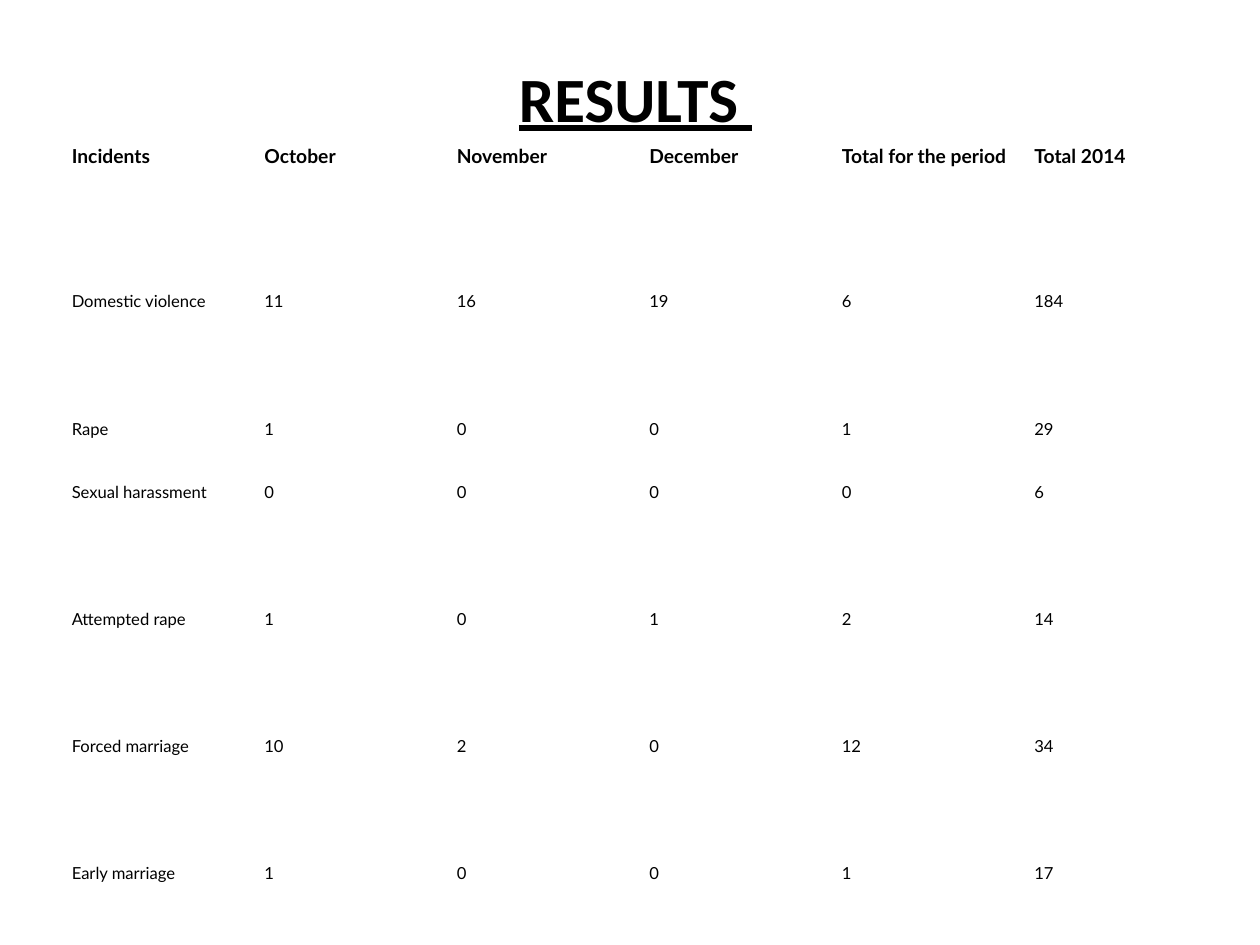
from pptx import Presentation
from pptx.dml.color import RGBColor
from pptx.enum.text import MSO_AUTO_SIZE as AutoSize, PP_ALIGN as Align
from pptx.util import Inches, Pt

COLOURS = {"text": "000000", "background": "FFFFFF"}

# Format values
TITLE_FONT = {"name": "Calibri", "size": Pt(36), "bold": True, "underline": True}
HEADER_FONT = {"name": "Lato", "size": Pt(11), "bold": True}
BODY_FONT = {"name": "Lato", "size": Pt(9.5), "bold": False}
TITLE_PARAGRAPH = {"alignment": Align.CENTER}
CELL_PARAGRAPH = {"line_spacing": 1.15, "space_after": Pt(8)}
CELL_MARGINS = {
    "margin_left": Inches(0.07),
    "margin_right": Inches(0.07),
    "margin_top": 0,
    "margin_bottom": 0,
}
PLAIN_TABLE = {"first_row": False, "horz_banding": False}

# Table content and grid
INCIDENTS = [
    ["Incidents", "October", "November", "December", "Total for the period", "Total 2014"],
    ["Domestic violence", 11, 16, 19, 6, 184],
    ["Rape", 1, 0, 0, 1, 29],
    ["Sexual harassment", 0, 0, 0, 0, 6],
    ["Attempted rape", 1, 0, 1, 2, 14],
    ["Forced marriage", 10, 2, 0, 12, 34],
    ["Early marriage", 1, 0, 0, 1, 17],
]
SHORT, TALL = 0.5, 1.01
ROW_HEIGHTS = [1.17, TALL, SHORT, TALL, TALL, TALL, SHORT]


def set_attributes(target, values):
    for name, value in values.items():
        setattr(target, name, value)


def write_text(text_frame, text, font, paragraph_format):
    paragraph = text_frame.paragraphs[0]
    set_attributes(paragraph, paragraph_format)
    run = paragraph.add_run()
    run.text = str(text)
    set_attributes(run.font, font)
    run.font.color.rgb = RGBColor.from_string(COLOURS["text"])


def add_title(slide, text, left, top, width, height):
    text_box = slide.shapes.add_textbox(*map(Inches, (left, top, width, height)))
    text_frame = text_box.text_frame
    set_attributes(text_frame, {"word_wrap": True, "auto_size": AutoSize.SHAPE_TO_FIT_TEXT})
    write_text(text_frame, text, TITLE_FONT, TITLE_PARAGRAPH)


def add_incident_table(slide, rows, left, top, width):
    position = map(Inches, (left, top, width, sum(ROW_HEIGHTS)))
    table = slide.shapes.add_table(len(rows), len(rows[0]), *position).table
    set_attributes(table, PLAIN_TABLE)
    for row_index, values in enumerate(rows):
        table.rows[row_index].height = Inches(ROW_HEIGHTS[row_index])
        font = BODY_FONT if row_index else HEADER_FONT
        for column_index, value in enumerate(values):
            cell = table.cell(row_index, column_index)
            cell.fill.background()
            set_attributes(cell, CELL_MARGINS)
            write_text(cell.text_frame, value, font, CELL_PARAGRAPH)


def main():
    presentation = Presentation()
    set_attributes(presentation, {"slide_width": Inches(10), "slide_height": Inches(7.5)})
    slide = presentation.slides.add_slide(presentation.slide_layouts[6])
    background = slide.background.fill
    background.solid()
    background.fore_color.rgb = RGBColor.from_string(COLOURS["background"])

    # Heading above the incident counts
    add_title(slide, "RESULTS ", 1.17, 0.42, 7.75, 0.71)
    add_incident_table(slide, INCIDENTS, 0.5, 1.12, 9.17)
    presentation.save("out.pptx")


if __name__ == "__main__":
    main()
